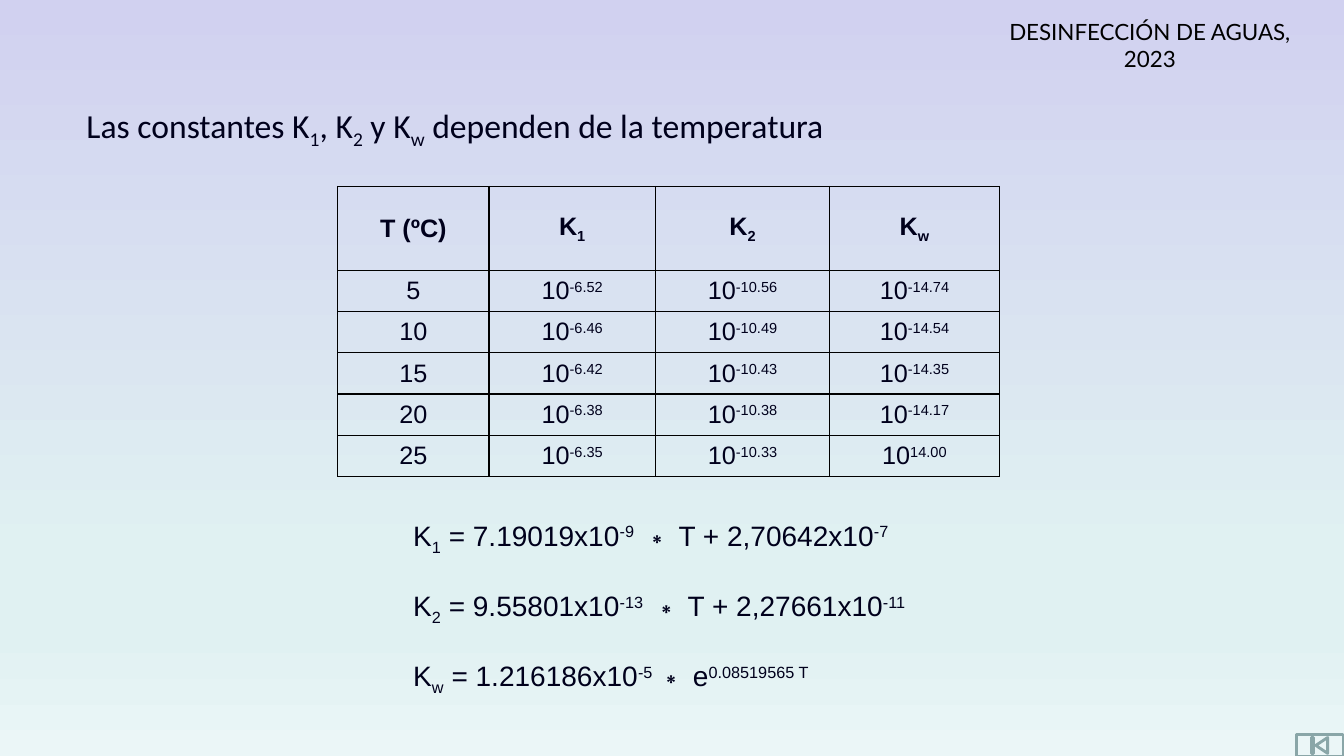
from dataclasses import dataclass

from lxml import etree
from pptx import Presentation
from pptx import util as u
from pptx.dml.color import RGBColor
from pptx.enum import shapes, text
from pptx.oxml import ns


@dataclass(frozen=True)
class Theme:
    ink: str = "00001C"
    black: str = "000000"
    button: str = "8AA6A8"
    sky: tuple = ((0, "D1D1F0"), (74, "E0F1F2"), (83, "E0F1F2"), (100, "EBF6F7"))
    header_font: str = "Lato"
    statement_font: str = "Calibri"
    data_font: str = "Arial"
    header_size: int = 16
    statement_size: int = 24
    constant_size: int = 18
    equation_size: int = 20


BASELINES = {"_": "-25000", "^": "30000"}


def write(paragraph, wording, *, font, size, color, bold=False, align=None, after=0):
    paragraph.alignment = align
    paragraph.space_after = u.Pt(after)
    for piece in wording.split("|"):
        shift = BASELINES.get(piece[0])
        run = paragraph.add_run()
        run.text = piece[1:] if shift else piece
        run.font.name = font
        run.font.size = u.Pt(size)
        run.font.bold = bold
        run.font.color.rgb = RGBColor.from_string(color)
        if shift:
            run.font._element.set("baseline", shift)


def add_color(parent, color):
    etree.SubElement(parent, ns.qn("a:srgbClr"), val=color)


class SlideBuilder:
    def __init__(self, slide, theme):
        self.slide = slide
        self.theme = theme

    def background(self):
        fill = self.slide.background.fill
        fill.gradient()
        gradient = self.slide.background._cSld.find(".//" + ns.qn("a:gradFill"))
        for part in list(gradient):
            gradient.remove(part)
        stops = etree.SubElement(gradient, ns.qn("a:gsLst"))
        for position, color in self.theme.sky:
            stop = etree.SubElement(stops, ns.qn("a:gs"), pos=str(position * 1000))
            add_color(stop, color)
        etree.SubElement(gradient, ns.qn("a:lin"), ang="5400000", scaled="0")

    def text(self, left, top, width, height, lines, **style):
        box = self.slide.shapes.add_textbox(*map(u.Inches, (left, top, width, height)))
        frame = box.text_frame
        frame.word_wrap = True
        frame.auto_size = text.MSO_AUTO_SIZE.SHAPE_TO_FIT_TEXT
        for index, line in enumerate(lines):
            paragraph = frame.add_paragraph() if index else frame.paragraphs[0]
            write(paragraph, line, **style)

    def button(self, left, top, width, height):
        start = self.slide.shapes.add_shape(
            shapes.MSO_SHAPE.ACTION_BUTTON_BEGINNING,
            *map(u.Inches, (left, top, width, height)))
        start.shadow.inherit = False
        start.fill.background()
        start.line.color.rgb = RGBColor.from_string(self.theme.button)
        start.line.width = u.Pt(2)

    def border(self, cell):
        properties = cell._tc.get_or_add_tcPr()
        for index, side in enumerate(("lnL", "lnR", "lnT", "lnB")):
            edge = etree.Element(ns.qn(f"a:{side}"), w=str(u.Pt(1)))
            add_color(etree.SubElement(edge, ns.qn("a:solidFill")), self.theme.black)
            properties.insert(index, edge)

    def table(self, left, top, widths, heights, rows):
        table = self.slide.shapes.add_table(
            len(rows), len(widths), u.Inches(left), u.Inches(top),
            u.Inches(sum(widths)), u.Inches(sum(heights))).table
        table.first_row = table.horz_banding = False
        for column, width in zip(table.columns, widths):
            column.width = u.Inches(width)
        for index, (row, height) in enumerate(zip(table.rows, heights)):
            row.height = u.Inches(height)
            for cell, wording in zip(row.cells, rows[index]):
                cell.fill.background()
                cell.vertical_anchor = text.MSO_ANCHOR.MIDDLE
                cell.margin_left = cell.margin_right = u.Inches(0.05)
                cell.margin_top = cell.margin_bottom = 0
                self.border(cell)
                write(cell.text_frame.paragraphs[0], wording,
                      font=self.theme.data_font, size=self.theme.constant_size,
                      color=self.theme.ink, bold=index == 0,
                      align=text.PP_ALIGN.CENTER)


def main():
    theme = Theme()
    deck = Presentation()
    deck.slide_width, deck.slide_height = u.Inches(13.33), u.Inches(7.5)
    builder = SlideBuilder(deck.slides.add_slide(deck.slide_layouts[6]), theme)

    builder.background()
    builder.button(12.86, 7.29, 0.46, 0.21)
    builder.text(9.82, 0.13, 3.17, 0.37, ["DESINFECCIÓN DE AGUAS, 2023"],
                 font=theme.header_font, size=theme.header_size,
                 color=theme.black, align=text.PP_ALIGN.CENTER)
    builder.text(0.76, 0.99, 11.73, 0.5,
                 ["Las constantes K|_1|, K|_2| y K|_w| dependen de la temperatura"],
                 font=theme.statement_font, size=theme.statement_size,
                 color=theme.ink, align=text.PP_ALIGN.JUSTIFY)

    exponents = {
        "5": ("-6.52", "-10.56", "-14.74"),
        "10": ("-6.46", "-10.49", "-14.54"),
        "15": ("-6.42", "-10.43", "-14.35"),
        "20": ("-6.38", "-10.38", "-14.17"),
        "25": ("-6.35", "-10.33", "14.00"),
    }
    constants = [["T (ºC)", "K|_1", "K|_2", "K|_w"]]
    for temperature, powers in exponents.items():
        constants.append([temperature] + [f"10|^{power}" for power in powers])
    builder.table(3.35, 1.85, [1.5, 1.65, 1.73, 1.68],
                  [0.83] + [0.41] * len(exponents), constants)

    equations = [
        "K|_1| = 7.19019x10|^-9  |∗ T + 2,70642x10|^-7",
        "K|_2| = 9.55801x10|^-13  |∗ T + 2,27661x10|^-11",
        "K|_w| = 1.216186x10|^-5 |∗ e|^0.08519565 T",
    ]
    builder.text(4, 5.09, 5.25, 2.12, equations, font=theme.data_font,
                 size=theme.equation_size, color=theme.ink, after=23)

    deck.save("out.pptx")


if __name__ == "__main__":
    main()
